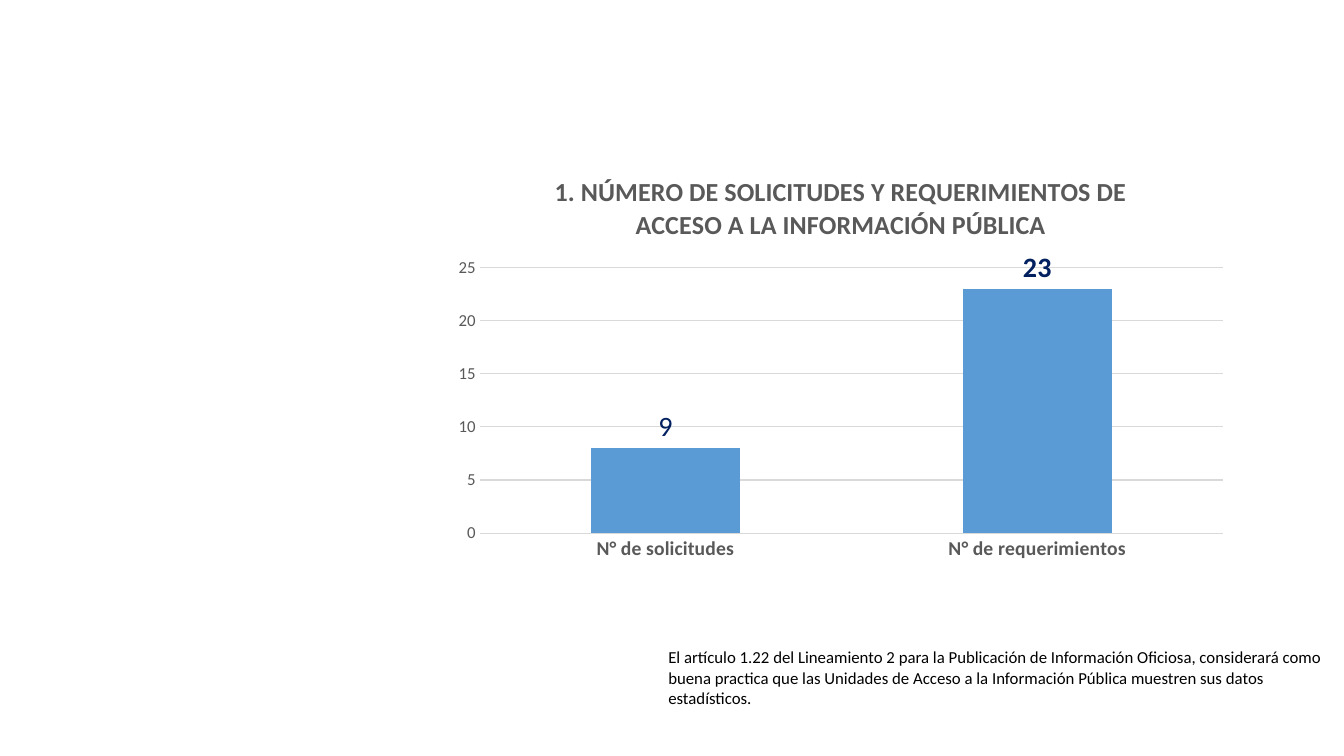
import pptx
import pptx.chart.data
import pptx.dml.color
import pptx.enum.chart
import pptx.enum.text
import pptx.util

Inches = pptx.util.Inches
COLORS = {
    "text": "000000",
    "heading": "595959",
    "grid": "D9D9D9",
    "bar": "5B9BD5",
    "label": "002060",
}


def rgb(color):
    return pptx.dml.color.RGBColor.from_string(COLORS[color])


def format_font(font, size, color, bold=False):
    font.name = "Calibri"
    font.size = pptx.util.Pt(size)
    font.bold = bold
    font.color.rgb = rgb(color)


def write_text(frame, text, **style):
    run = frame.paragraphs[0].add_run()
    run.text = text
    format_font(run.font, **style)


class SlideBuilder:
    def __init__(self, slide):
        self.slide = slide

    def note(self, text, left, top, width, height):
        box = self.slide.shapes.add_textbox(
            Inches(left), Inches(top), Inches(width), Inches(height)
        )
        box.text_frame.word_wrap = True
        box.text_frame.auto_size = pptx.enum.text.MSO_AUTO_SIZE.SHAPE_TO_FIT_TEXT
        write_text(box.text_frame, text, size=12, color="text")

    def column_chart(self, heading, counts, left, top, width, height):
        chart_data = pptx.chart.data.CategoryChartData()
        chart_data.categories = list(counts)
        chart_data.add_series(heading, list(counts.values()))
        chart = self.slide.shapes.add_chart(
            pptx.enum.chart.XL_CHART_TYPE.COLUMN_CLUSTERED,
            Inches(left), Inches(top), Inches(width), Inches(height), chart_data,
        ).chart
        format_font(chart.font, 10, "text")
        chart.has_legend = False
        chart.has_title = True
        chart.chart_title.include_in_layout = False
        write_text(chart.chart_title.text_frame, heading,
                   size=18.6, color="heading", bold=True)
        self.axis(chart.category_axis, 14, bold=True)
        self.axis(chart.value_axis, 12)
        chart.value_axis.minimum_scale = 0
        chart.value_axis.maximum_scale = 25
        chart.value_axis.major_unit = 5
        chart.value_axis.has_major_gridlines = True
        gridline = chart.value_axis.major_gridlines.format.line
        gridline.color.rgb = rgb("grid")
        gridline.width = pptx.util.Pt(0.75)
        self.bars(chart.plots[0])

    def axis(self, axis, size, bold=False):
        axis.major_tick_mark = pptx.enum.chart.XL_TICK_MARK.NONE
        axis.minor_tick_mark = pptx.enum.chart.XL_TICK_MARK.NONE
        axis.format.line.fill.background()
        format_font(axis.tick_labels.font, size, "heading", bold)

    def bars(self, plot):
        plot.gap_width = 150
        plot.vary_by_categories = False
        counts = plot.series[0]
        counts.format.fill.solid()
        counts.format.fill.fore_color.rgb = rgb("bar")
        outside = pptx.enum.chart.XL_LABEL_POSITION.OUTSIDE_END
        labels = counts.data_labels
        labels.show_value = True
        labels.position = outside
        format_font(labels.font, 20, "label", bold=True)
        requests_label = counts.points[0].data_label
        write_text(requests_label.text_frame, "9", size=20, color="label")
        requests_label.position = outside


def main():
    presentation = pptx.Presentation()
    presentation.slide_width = Inches(13.33)
    presentation.slide_height = Inches(7.5)
    builder = SlideBuilder(
        presentation.slides.add_slide(presentation.slide_layouts[6])
    )
    builder.note(
        "El artículo 1.22 del Lineamiento 2 para la Publicación de Información "
        "Oficiosa, considerará como buena practica que las Unidades de Acceso a "
        "la Información Pública muestren sus datos estadísticos.",
        6.53, 6.37, 6.8, 0.71,
    )
    builder.column_chart(
        "1. NÚMERO DE SOLICITUDES Y REQUERIMIENTOS DE ACCESO A LA "
        "INFORMACIÓN PÚBLICA",
        {"N° de solicitudes": 8, "N° de requerimientos": 23},
        4.39, 1.54, 7.9, 4.11,
    )
    presentation.save("out.pptx")


if __name__ == "__main__":
    main()
